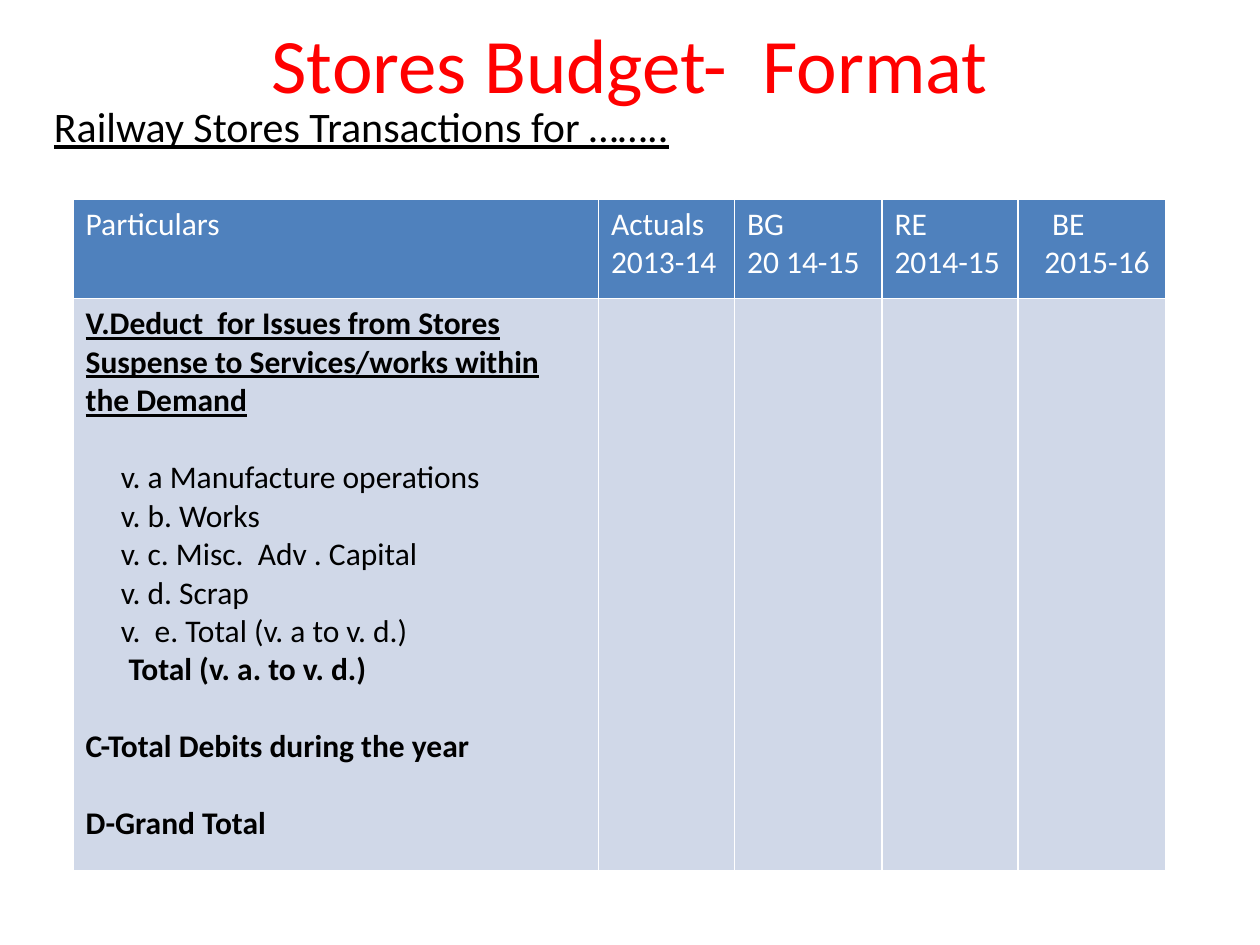
"""Build the stores budget format slide."""
from dataclasses import dataclass

from lxml import etree
from pptx import Presentation
from pptx.dml.color import RGBColor
from pptx.enum import text
from pptx.oxml import ns
from pptx.util import Inches, Pt

FONT = "Calibri"
WHITE, BLACK, RED = "FFFFFF", "000000", "FF0000"
HEADER_FILL, BODY_FILL = "4F81BD", "D0D8E8"
BLANK_LINE = 22


@dataclass
class Line:
    wording: str
    bold: bool = False
    underline: bool = False
    indent: float = 0
    before: float = 0


COLUMN_WIDTHS = [4.17, 1.08, 1.17, 1.08, 1.17]
ROW_HEIGHTS = [0.79, 4.54]
HEADINGS = [
    [Line("Particulars")],
    [Line("Actuals"), Line("2013-14")],
    [Line("BG"), Line("20 14-15")],
    [Line("RE"), Line("2014-15")],
    [Line("BE", indent=0.17), Line("2015-16", indent=0.11)],
]
ISSUES = [
    "v. a Manufacture operations",
    "v. b. Works",
    "v. c. Misc.  Adv . Capital",
    "v. d. Scrap",
    "v.  e. Total (v. a to v. d.)",
]
PARTICULARS = [
    Line("V.Deduct  for Issues from Stores Suspense to Services/works within the Demand",
         bold=True, underline=True),
    *[Line(issue, indent=0.28, before=0 if number else BLANK_LINE)
      for number, issue in enumerate(ISSUES)],
    Line("Total (v. a. to v. d.)", bold=True, indent=0.34),
    Line("C-Total Debits during the year", bold=True, before=BLANK_LINE),
    Line("D-Grand Total", bold=True, before=BLANK_LINE),
]


def rgb(color: str) -> RGBColor:
    return RGBColor.from_string(color)


def write(frame, lines: list[Line], size: float, color: str, align=None) -> None:
    for number, line in enumerate(lines):
        paragraph = frame.add_paragraph() if number else frame.paragraphs[0]
        paragraph.text = line.wording
        paragraph.alignment = align
        paragraph.space_before = Pt(line.before)
        font = paragraph.font
        font.name, font.size = FONT, Pt(size)
        font.bold, font.underline = line.bold, line.underline
        font.color.rgb = rgb(color)
        if line.indent:
            properties = paragraph._p.get_or_add_pPr()
            properties.set("marL", str(Inches(line.indent)))
            properties.set("indent", "0")


def place(shape, left: float, top: float, width: float, height: float) -> None:
    shape.left, shape.top = Inches(left), Inches(top)
    shape.width, shape.height = Inches(width), Inches(height)


def add_borders(cell, color: str, points: float) -> None:
    properties = cell._tc.get_or_add_tcPr()
    for position, side in enumerate(("lnL", "lnR", "lnT", "lnB")):
        border = etree.Element(ns.qn(f"a:{side}"), w=str(Pt(points)))
        fill = etree.SubElement(border, ns.qn("a:solidFill"))
        etree.SubElement(fill, ns.qn("a:srgbClr"), val=color)
        properties.insert(position, border)


def fill_cell(cell, lines: list[Line], fill: str, color: str) -> None:
    cell.fill.solid()
    cell.fill.fore_color.rgb = rgb(fill)
    add_borders(cell, WHITE, 1)
    write(cell.text_frame, lines, 18, color)


def add_budget_table(slide) -> None:
    budget = slide.shapes.add_table(
        len(ROW_HEIGHTS), len(COLUMN_WIDTHS), Inches(0.58), Inches(1.58),
        Inches(sum(COLUMN_WIDTHS)), Inches(sum(ROW_HEIGHTS))).table
    for row, height in zip(budget.rows, ROW_HEIGHTS):
        row.height = Inches(height)
    for index, (width, heading) in enumerate(zip(COLUMN_WIDTHS, HEADINGS)):
        budget.columns[index].width = Inches(width)
        fill_cell(budget.cell(0, index), heading, HEADER_FILL, WHITE)
        fill_cell(budget.cell(1, index), [] if index else PARTICULARS, BODY_FILL, BLACK)


def main() -> None:
    deck = Presentation()
    deck.slide_width, deck.slide_height = Inches(10), Inches(7.5)
    slide = deck.slides.add_slide(deck.slide_layouts[5])

    title = slide.shapes.title
    place(title, 0.75, 0.08, 8.5, 0.83)
    title.text_frame.vertical_anchor = text.MSO_ANCHOR.MIDDLE
    write(title.text_frame, [Line("Stores Budget-  Format")], 44, RED, text.PP_ALIGN.CENTER)

    subtitle = slide.shapes.add_textbox(0, 0, 0, 0)
    place(subtitle, 0.33, 0.75, 9.33, 6.17)
    subtitle.text_frame.word_wrap = True
    write(subtitle.text_frame, [Line("Railway Stores Transactions for ……..", underline=True)],
          24, BLACK, text.PP_ALIGN.JUSTIFY)

    add_budget_table(slide)
    deck.save("out.pptx")


if __name__ == "__main__":
    main()
